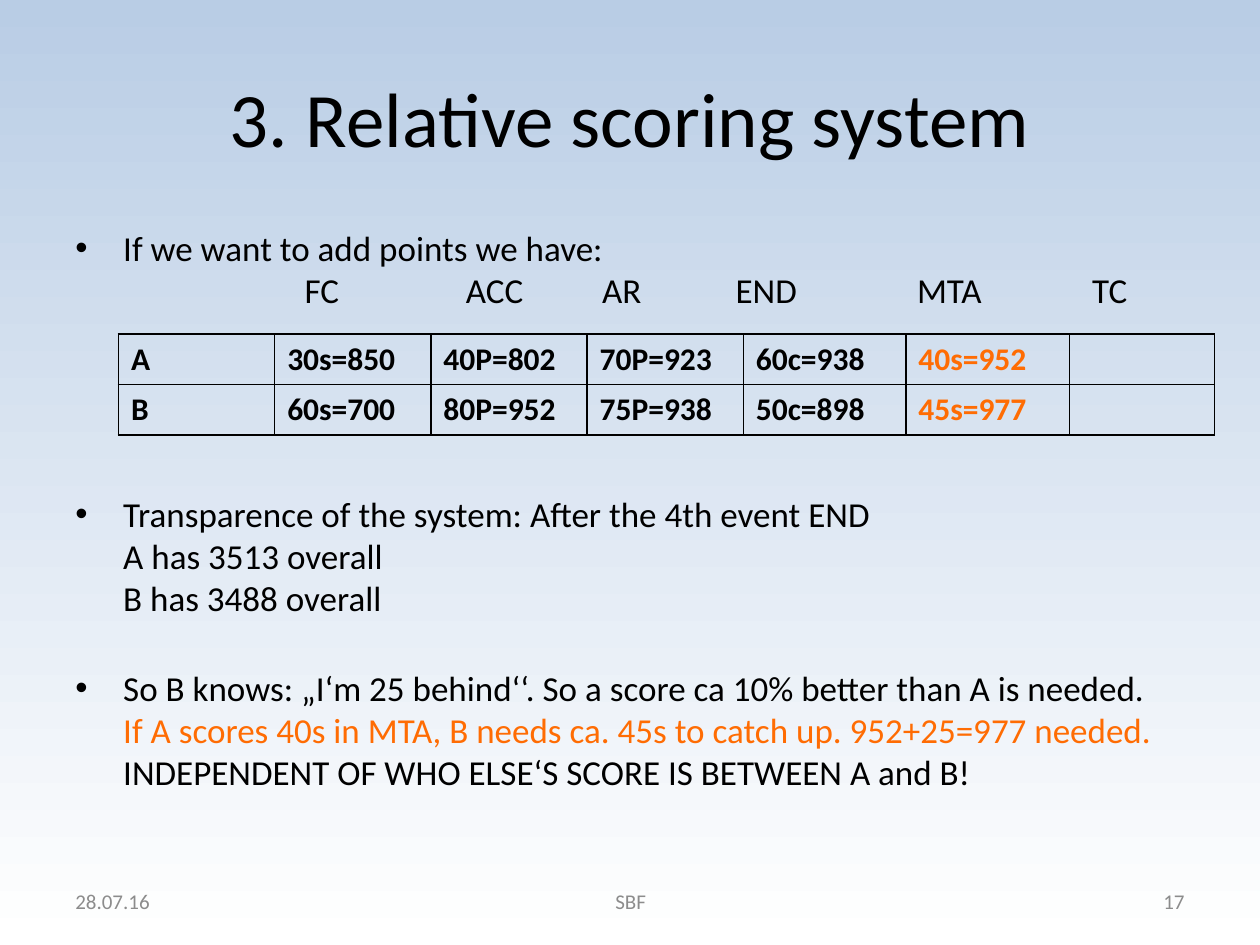
from lxml import etree
from pptx import Presentation
from pptx.dml.color import RGBColor
from pptx.enum.text import MSO_ANCHOR, PP_ALIGN
from pptx.oxml.ns import qn
from pptx.util import Inches, Pt

BLACK, ORANGE, GREY, SKY, WHITE = "000000", "FF6C03", "8C8C8C", "B9CDE5", "FFFFFF"

# Content
TITLE = "3. Relative scoring system"
EVENTS = [("FC", 1.82), ("ACC", 3.1), ("AR", 4.18),
          ("END", 5.24), ("MTA", 6.68), ("TC", 8.07)]  # label, tab stop
SCORES = [
    ["A", "30s=850", "40P=802", "70P=923", "60c=938", "40s=952", ""],
    ["B", "60s=700", "80P=952", "75P=938", "50c=898", "45s=977", ""],
]
COL_WIDTHS = [1.24, 1.24, 1.24, 1.24, 1.29, 1.3, 1.15]
MTA_COL = 5
INTRO = [("If we want to add points we have:", BLACK)]
CONCLUSIONS = [  # space before in points, lines with their colour
    (103.6, [("Transparence of the system: After the 4th event END", BLACK),
             ("A has 3513 overall", BLACK),
             ("B has 3488 overall", BLACK)]),
    (27.6, [("So B knows: „I‘m 25 behind‘‘. So a score ca 10% better than A is needed.", BLACK),
            ("If A scores 40s in MTA, B needs ca. 45s to catch up. 952+25=977 needed.", ORANGE),
            ("INDEPENDENT OF WHO ELSE‘S SCORE IS BETWEEN A and B!", BLACK)]),
]
FOOTERS = [("28.07.16", 0.5, 2.33, PP_ALIGN.LEFT),
           ("SBF", 3.42, 3.17, PP_ALIGN.CENTER),
           ("17", 7.17, 2.33, PP_ALIGN.RIGHT)]


def rgb(color):
    return RGBColor.from_string(color)


def write(p, content, size=20, color=BLACK, bold=False, align=PP_ALIGN.LEFT):
    p.alignment = align
    r = p.add_run()
    r.text = content
    r.font.name, r.font.size, r.font.bold = "Calibri", Pt(size), bold
    r.font.color.rgb = rgb(color)


def add_box(s, left, top, width, height, anchor=MSO_ANCHOR.MIDDLE):
    box = s.shapes.add_textbox(*map(Inches, (left, top, width, height)))
    tf = box.text_frame
    tf.word_wrap = True
    tf.vertical_anchor = anchor
    return tf


def write_bullet(p, lines, before=0):
    pPr = p._p.get_or_add_pPr()
    pPr.set("marL", str(Inches(0.38)))
    pPr.set("indent", str(Inches(-0.38)))
    etree.SubElement(pPr, qn("a:buFont"), typeface="Arial")
    etree.SubElement(pPr, qn("a:buChar"), char="•")
    p.space_before = Pt(before)
    for i, (line, color) in enumerate(lines):
        if i:
            p.add_line_break()
        write(p, line, color=color)
    # Line breaks keep the size of the text around them
    for br in p._p.findall(qn("a:br")):
        etree.SubElement(br, qn("a:rPr"), sz="2000")


def write_tabbed(p, columns):
    tabs = etree.SubElement(p._p.get_or_add_pPr(), qn("a:tabLst"))
    for _, pos in columns:
        etree.SubElement(tabs, qn("a:tab"), pos=str(Inches(pos)), algn="l")
    write(p, "".join("\t" + label for label, _ in columns))


def border_cell(cell):
    tcPr = cell._tc.get_or_add_tcPr()
    for i, side in enumerate(("lnL", "lnR", "lnT", "lnB")):
        ln = etree.Element(qn("a:" + side), w=str(Pt(1)))
        fill = etree.SubElement(ln, qn("a:solidFill"))
        etree.SubElement(fill, qn("a:srgbClr"), val=BLACK)
        tcPr.insert(i, ln)


prs = Presentation()
prs.slide_width, prs.slide_height = Inches(10), Inches(7.5)
s = prs.slides.add_slide(prs.slide_layouts[6])

# Background, blue at the top fading to white
bg = s.background.fill
bg.gradient()
bg.gradient_angle = 270
for stop, color in zip(bg.gradient_stops, (SKY, WHITE)):
    stop.color.rgb = rgb(color)

# Title
tf = add_box(s, 0.5, 0.3, 9, 1.25)
write(tf.paragraphs[0], TITLE, size=44, align=PP_ALIGN.CENTER)

# Body text
tf = add_box(s, 0.5, 1.75, 9, 4.95, MSO_ANCHOR.TOP)
write_bullet(tf.paragraphs[0], INTRO)
write_tabbed(tf.add_paragraph(), EVENTS)
for before, lines in CONCLUSIONS:
    write_bullet(tf.add_paragraph(), lines, before)

# Score table
table = s.shapes.add_table(len(SCORES), len(COL_WIDTHS), Inches(0.94), Inches(2.65),
                           Inches(sum(COL_WIDTHS)), Inches(0.8)).table
table.first_row = table.horz_banding = False
for col, width in zip(table.columns, COL_WIDTHS):
    col.width = Inches(width)
for i, row in enumerate(SCORES):
    for j, score in enumerate(row):
        cell = table.cell(i, j)
        cell.fill.background()
        border_cell(cell)
        write(cell.text_frame.paragraphs[0], score, size=18, bold=True,
              color=ORANGE if j == MTA_COL else BLACK)

# Footer
for label, left, width, align in FOOTERS:
    tf = add_box(s, left, 6.95, width, 0.4)
    write(tf.paragraphs[0], label, size=12, color=GREY, align=align)

prs.save("out.pptx")
